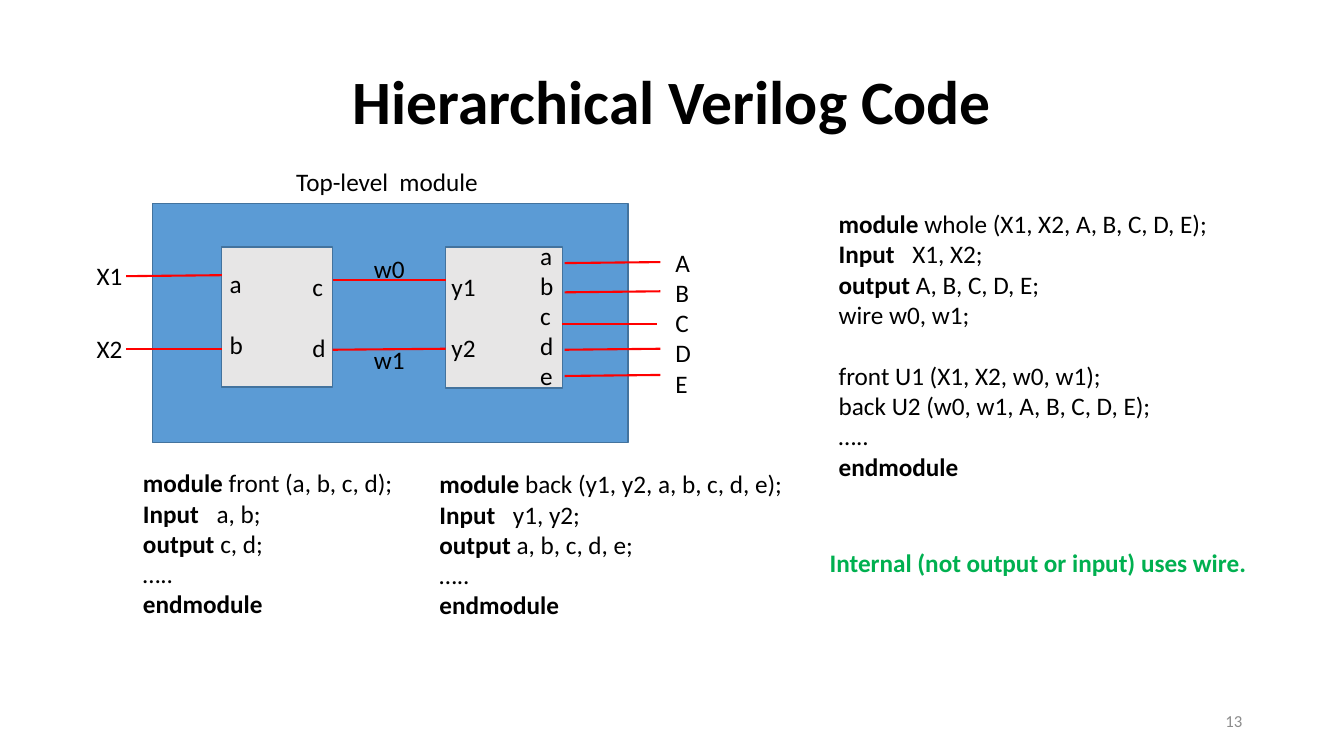
from pptx import Presentation
from pptx.dml.color import RGBColor as RGB
from pptx.enum.shapes import MSO_CONNECTOR as CONN, MSO_SHAPE as SHAPE
from pptx.enum.text import MSO_ANCHOR as ANCHOR, MSO_AUTO_SIZE as AUTO, PP_ALIGN as ALIGN
from pptx.oxml.ns import qn
from pptx.util import Inches, Pt
from lxml.etree import SubElement

COLORS = {"text": "000000", "board": "5B9BD5", "block": "E7E6E6", "edge": "43739E",
          "wire": "FF0000", "note": "00B050", "number": "8C8C8C"}
KEYWORDS = {"module", "Input", "output", "endmodule"}


class Slide:
    """One slide on a grid of tenth-inch columns and rows."""
    FONT, SIZE, LINE = "Calibri", 18, 22

    def __init__(self, prs):
        self.s = prs.slides.add_slide(prs.slide_layouts[6])

    def grid(self, *cells):
        return [Inches(c / 10) for c in cells]

    def color(self, name):
        return RGB.from_string(COLORS[name])

    def block(self, col, row, cols, rows, fill):
        sp = self.s.shapes.add_shape(SHAPE.RECTANGLE, *self.grid(col, row, cols, rows))
        sp.shadow.inherit = False
        sp.fill.solid()
        sp.fill.fore_color.rgb = self.color(fill)
        sp.line.color.rgb = self.color("edge")
        sp.line.width = Pt(1)

    def wire(self, col, row, end_col, end_row):
        c = self.s.shapes.add_connector(CONN.STRAIGHT, *self.grid(col, row, end_col, end_row))
        c.line.color.rgb = self.color("wire")
        c.line.width = Pt(1.5)
        SubElement(c._element.spPr, qn("a:effectLst"))

    def box(self, col, row, cols, rows):
        tf = self.s.shapes.add_textbox(*self.grid(col, row, cols, rows)).text_frame
        tf.word_wrap = False
        tf.auto_size = AUTO.SHAPE_TO_FIT_TEXT
        return tf

    def style(self, p, size=SIZE, color="text", bold=None):
        p.font.name, p.font.size, p.font.bold = self.FONT, Pt(size), bold
        p.font.color.rgb = self.color(color)

    def label(self, col, row, cols, rows, *lines, skip=0, color="text", bold=None):
        """Lines of text, with skip empty line heights between them."""
        tf = self.box(col, row, cols, rows)
        tf.text = "\n".join(lines)
        for i, p in enumerate(tf.paragraphs):
            self.style(p, color=color, bold=bold)
            if i and skip:
                p.space_before = Pt(skip * self.LINE)

    def heading(self, col, row, cols, rows, text, size, align, color="text", bold=None):
        tf = self.box(col, row, cols, rows)
        tf.auto_size, tf.word_wrap = AUTO.NONE, True
        tf.vertical_anchor = ANCHOR.MIDDLE
        p = tf.paragraphs[0]
        p.text, p.alignment = text, align
        self.style(p, size, color, bold)

    def code(self, col, row, cols, rows, *sections):
        """Code with bold keywords and one line of space between sections."""
        tf = self.box(col, row, cols, rows)
        tf.text = "\n".join("\n".join(lines) for lines in sections)
        starts = {len(sections[0])} if len(sections) > 1 else set()
        for i, p in enumerate(tf.paragraphs):
            line = p.text
            word = line.split()[0]
            self.style(p)
            if i in starts:
                p.space_before = Pt(self.LINE)
            if word in KEYWORDS:
                r = p.runs[0]
                r.text, r.font.bold = word, True
                if line != word:
                    p.add_run().text = line[len(word):]
            if "\t" in line:
                tabs = SubElement(p._p.get_or_add_pPr(), qn("a:tabLst"))
                SubElement(tabs, qn("a:tab"), pos=str(Inches(0.73)), algn="l")
                p._p.pPr.insert(0, tabs)


def main():
    prs = Presentation()
    prs.slide_width, prs.slide_height = Inches(13.33), Inches(7.5)
    s = Slide(prs)

    # Title and page number
    s.heading(9.2, 4, 115, 11.9, "Hierarchical Verilog Code", 44, ALIGN.CENTER, bold=True)
    s.heading(94.2, 69.5, 30, 4, "13", 12, ALIGN.RIGHT, "number")

    # Top-level module with its front and back blocks
    s.block(15.1, 20.2, 47.2, 23.7, "board")
    s.block(22, 24.5, 11, 13.9, "block")
    s.block(44.2, 24.5, 11.6, 14, "block")

    # Inputs, outputs, internal wires
    s.wire(12.5, 27.4, 22, 27.3)
    s.wire(12.5, 34.6, 22, 34.6)
    for col, row, rise in ((56, 26.1, 0.1), (56, 29, 0.1), (55.7, 32.1, 0),
                           (56, 34.7, 0.1), (56, 37.3, 0.1)):
        s.wire(col, row, col + 9.5, row - rise)
    s.wire(33, 27.8, 44.2, 27.8)
    s.wire(33, 34.7, 44.2, 34.6)

    # Port and wire names
    s.label(28.4, 16, 20.3, 4, "Top-level  module")
    s.label(8.6, 25.3, 4.6, 4, "X1")
    s.label(8.6, 32.6, 4.6, 4, "X2")
    s.label(66, 24, 3.6, 16.2, *"ABCDE")
    s.label(52.6, 23.3, 3.4, 16.2, *"abcde")
    s.label(21.8, 26.1, 3.4, 10.1, "a", "b", skip=1)
    s.label(30, 26.4, 3.4, 10.1, "c", "d", skip=1)
    s.label(43.8, 26.4, 4.4, 10.1, "y1", "y2", skip=1)
    s.label(36.1, 24.6, 5.1, 13.1, "w0", "w1", skip=2)

    # Code of the three modules
    ending = ["…..", "endmodule"]
    s.code(13.2, 45.9, 27, 19.2,
           ["module front (a, b, c, d);", "Input\ta, b;", "output c, d;", *ending])
    s.code(42.6, 46, 36.4, 19.2,
           ["module back (y1, y2, a, b, c, d, e);", "Input\ty1, y2;",
            "output a, b, c, d, e;", *ending])
    s.code(82.2, 20.2, 39, 31.3,
           ["module whole (X1, X2, A, B, C, D, E);", "Input\tX1, X2;",
            "output A, B, C, D, E;", "wire w0, w1;"],
           ["front U1 (X1, X2, w0, w1);", "back U2 (w0, w1, A, B, C, D, E);", *ending])

    # Remark
    s.label(81.3, 53.8, 43.7, 4, "Internal (not output or input) uses wire.",
            color="note", bold=True)

    prs.save("out.pptx")


if __name__ == "__main__":
    main()
